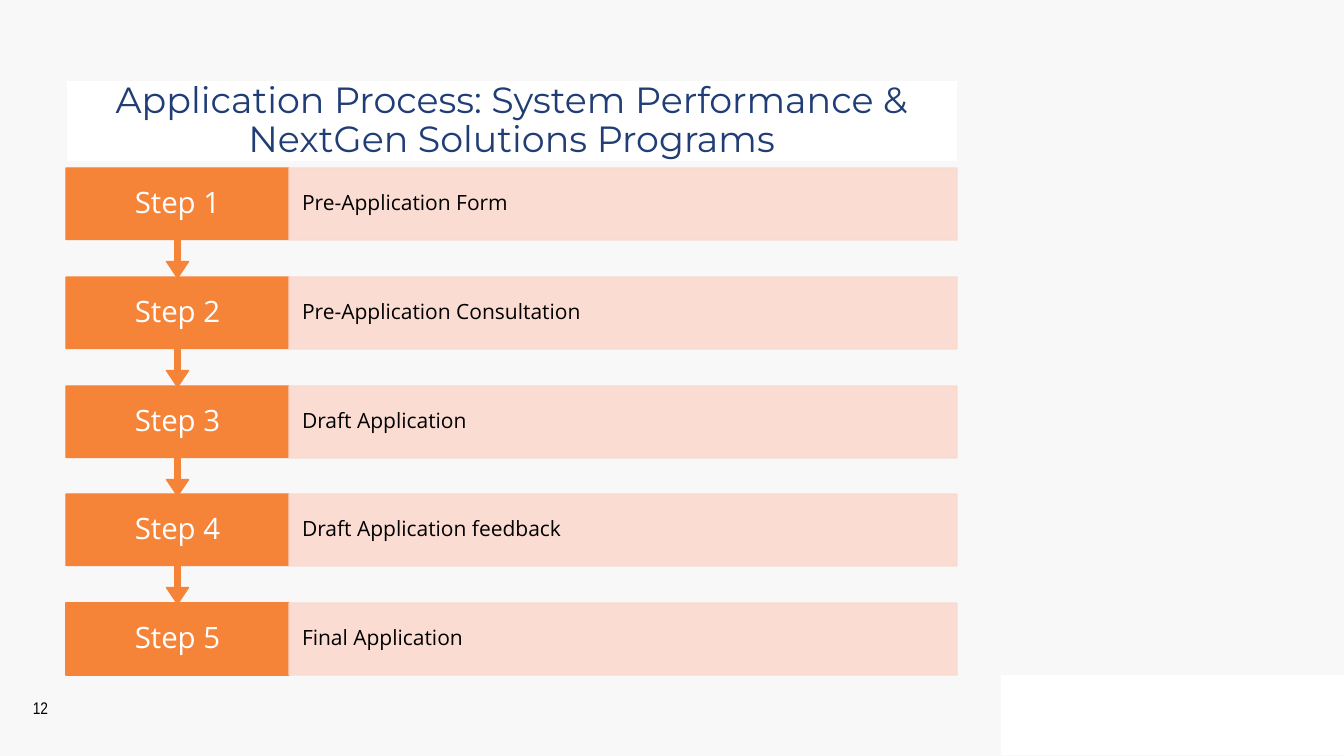
from dataclasses import dataclass

from lxml import etree
from pptx import Presentation
from pptx.dml.color import RGBColor
from pptx.dml.fill import FillFormat
from pptx.enum.shapes import MSO_SHAPE as Preset
from pptx.enum.text import MSO_ANCHOR as Anchor, PP_ALIGN as Align
from pptx.oxml.ns import qn
from pptx.shapes.autoshape import Shape
from pptx.slide import Slide
from pptx.util import Emu, Pt

PX = 914400 / 100.8
WHITE, BLACK, NAVY = "FFFFFF", "000000", "213D75"
ORANGE, PEACH = "F58438", "FBD9CE"

LEFT, HEAD_WIDTH, DETAIL_WIDTH = 66, 223, 668
FIRST_TOP, LAST_TOP = 168, 603
ROW_HEIGHT, CALLOUT_HEIGHT = 72, 110
STEPS = (
    "Pre-Application Form",
    "Pre-Application Consultation",
    "Draft Application",
    "Draft Application feedback",
    "Final Application",
)


@dataclass(frozen=True)
class Box:
    left: int
    top: int
    width: int
    height: int

    def emu(self) -> list[Emu]:
        return [px(n) for n in (self.left, self.top, self.width, self.height)]


@dataclass(frozen=True)
class TextStyle:
    font: str
    size: int
    color: str
    align: Align
    inset_x: int
    inset_y: int
    line_spacing: float = 0.9


TITLE = TextStyle("Montserrat", 26, NAVY, Align.CENTER, 10, 5)
HEAD = TextStyle("Open Sans", 21, WHITE, Align.CENTER, 16, 16)
DETAIL = TextStyle("Open Sans", 15, BLACK, Align.LEFT, 13, 21)
PAGE_NUMBER = TextStyle("Arial Narrow", 12, BLACK, Align.CENTER, 10, 5, 1.0)


def px(length: int) -> Emu:
    return Emu(round(length * PX))


def paint(fill: FillFormat, color: str) -> None:
    fill.solid()
    fill.fore_color.rgb = RGBColor.from_string(color)


def set_opacity(shape: Shape, percent: int) -> None:
    """Apply one opacity to both the fill and the outline."""
    for color in shape._element.spPr.iter(qn("a:srgbClr")):
        etree.SubElement(color, qn("a:alpha"), val=str(percent * 1000))


def add_panel(slide: Slide, preset: Preset, box: Box, color: str,
              outlined: bool = False) -> Shape:
    panel = slide.shapes.add_shape(preset, *box.emu())
    panel.shadow.inherit = False
    paint(panel.fill, color)
    if outlined:
        paint(panel.line.fill, color)
        panel.line.width = Pt(1)
    else:
        panel.line.fill.background()
    return panel


def write(shape: Shape, text: str, style: TextStyle) -> None:
    frame = shape.text_frame
    frame.word_wrap = True
    frame.vertical_anchor = Anchor.MIDDLE
    frame.margin_left = frame.margin_right = px(style.inset_x)
    frame.margin_top = frame.margin_bottom = px(style.inset_y)
    paragraph = frame.paragraphs[0]
    paragraph.text = text
    paragraph.alignment = style.align
    paragraph.line_spacing = style.line_spacing
    paragraph.font.name = style.font
    paragraph.font.size = Pt(style.size)
    paragraph.font.color.rgb = RGBColor.from_string(style.color)


def add_step(slide: Slide, index: int, description: str) -> None:
    """Draw a step head, with an arrow down unless it is last, and its detail."""
    last = len(STEPS) - 1
    top = FIRST_TOP + round(index * (LAST_TOP - FIRST_TOP) / last)
    head_box = Box(LEFT, top, HEAD_WIDTH, ROW_HEIGHT)
    if index == last:
        add_panel(slide, Preset.RECTANGLE, head_box, ORANGE, outlined=True)
    else:
        callout_box = Box(LEFT, top, HEAD_WIDTH, CALLOUT_HEIGHT)
        callout = add_panel(slide, Preset.UP_ARROW_CALLOUT, callout_box, ORANGE,
                            outlined=True)
        callout.rotation = 180
        for position, value in enumerate((0.05, 0.1, 0.15, 0.65)):
            callout.adjustments[position] = value
    # The callout is turned over, so its label stands in an upright text box.
    write(slide.shapes.add_textbox(*head_box.emu()), f"Step {index + 1}", HEAD)

    detail_box = Box(LEFT + HEAD_WIDTH, top, DETAIL_WIDTH, ROW_HEIGHT)
    detail = add_panel(slide, Preset.RECTANGLE, detail_box, PEACH, outlined=True)
    set_opacity(detail, 90)
    write(detail, description, DETAIL)


def main() -> None:
    deck = Presentation()
    deck.slide_width, deck.slide_height = px(1344), px(756)
    slide = deck.slides.add_slide(deck.slide_layouts[6])
    paint(slide.background.fill, "F8F8F8")

    add_panel(slide, Preset.FLOWCHART_PROCESS, Box(1001, 675, 343, 80), WHITE)
    page_number = slide.shapes.add_textbox(*Box(18, 688, 45, 40).emu())
    write(page_number, "12", PAGE_NUMBER)

    title = add_panel(slide, Preset.RECTANGLE, Box(67, 81, 890, 80), WHITE)
    write(title, "Application Process: System Performance & NextGen Solutions Programs",
          TITLE)
    for index, description in enumerate(STEPS):
        add_step(slide, index, description)

    deck.save("out.pptx")


if __name__ == "__main__":
    main()
